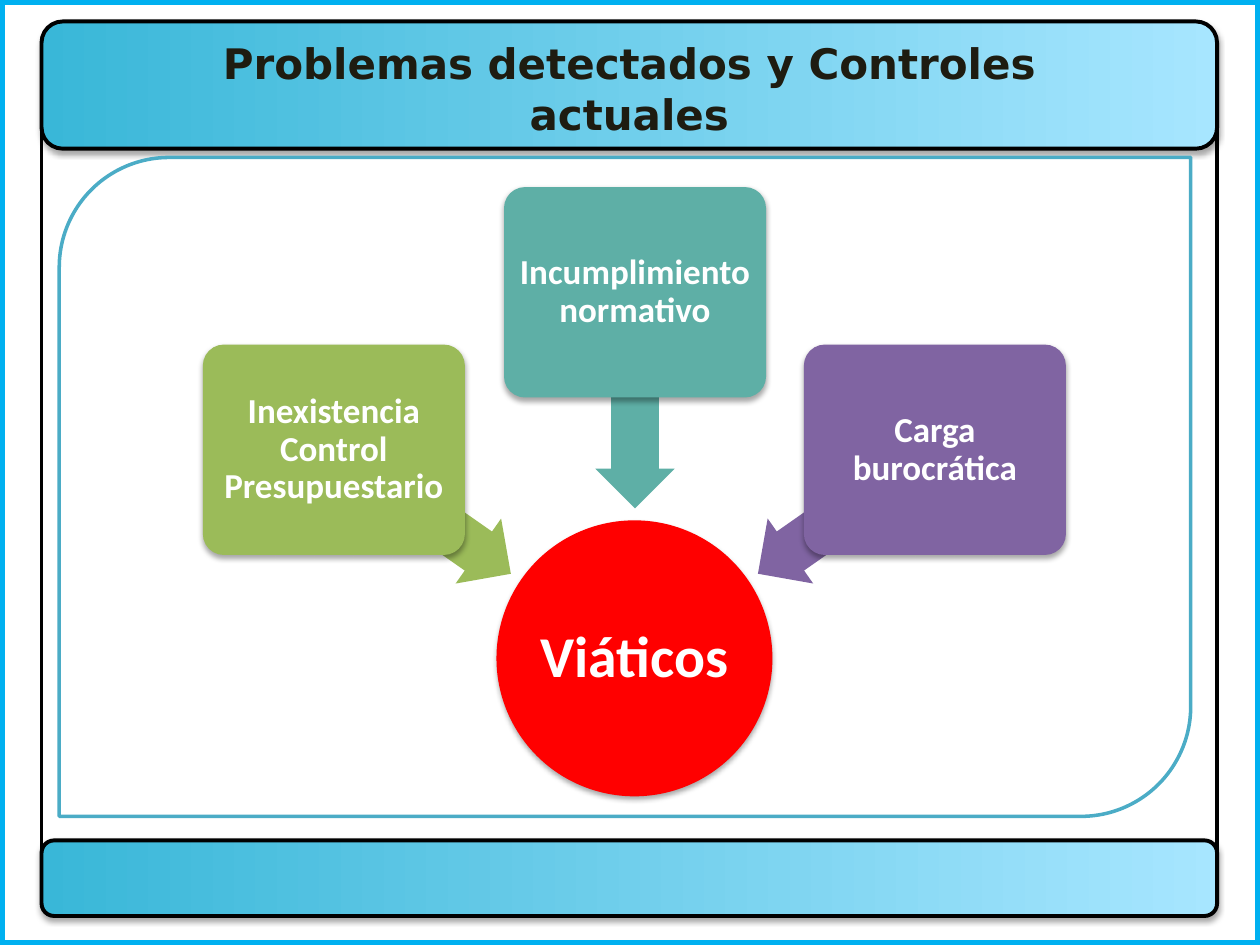
from math import cos, radians, sin

from lxml import etree
from pptx import Presentation
from pptx.dml.color import RGBColor
from pptx.enum import shapes, text
from pptx.oxml import ns
from pptx.util import Inches, Pt

WHITE = RGBColor(0xFF, 0xFF, 0xFF)
BLACK = RGBColor(0, 0, 0)
INK = RGBColor(0x1E, 0x1C, 0x11)
FRAME_BLUE = RGBColor(0x00, 0xB0, 0xF0)
PANEL_BLUE = RGBColor(0x4B, 0xAC, 0xC6)
BANNER_DARK = RGBColor(0x39, 0xB7, 0xD8)
BANNER_LIGHT = RGBColor(0xA7, 0xE6, 0xFF)
RED = RGBColor(0xFF, 0, 0)
GREEN = RGBColor(0x9B, 0xBB, 0x59)
TEAL = RGBColor(0x5E, 0xAF, 0xA6)
PURPLE = RGBColor(0x80, 0x64, 0xA2)

SHAPE = shapes.MSO_SHAPE
BOX_WIDTH, BOX_HEIGHT = 2.08, 1.67
ARROW_LENGTH, ARROW_HEIGHT, ARROW_OFFSET = 1.71, 0.63, 0.86
PROBLEMS = [
    ("Inexistencia Control Presupuestario", GREEN, 2.65, 3.57, 35),
    ("Incumplimiento normativo", TEAL, 5.04, 2.32, 90),
    ("Carga burocrática", PURPLE, 7.42, 3.57, 145),
]


class SlidePainter:
    body_font = "Calibri"
    title_font = "DejaVu Sans"

    def __init__(self, slide):
        self.slide = slide

    def shape(self, kind, left, top, width, height, fill, line=None, weight=0):
        box = self.slide.shapes.add_shape(
            kind, Inches(left), Inches(top), Inches(width), Inches(height))
        box.shadow.inherit = False
        box.fill.solid()
        box.fill.fore_color.rgb = fill
        if line is None:
            box.line.fill.background()
        else:
            box.line.color.rgb = line
            box.line.width = Pt(weight)
        return box

    def cast_shadow(self, box):
        effects = box._element.spPr.find(ns.qn("a:effectLst"))
        shadow = etree.SubElement(
            effects, ns.qn("a:outerShdw"), blurRad=str(Pt(3.1)), dist=str(Pt(1.8)),
            dir="5400000", rotWithShape="0")
        color = etree.SubElement(shadow, ns.qn("a:srgbClr"), val=str(BLACK))
        etree.SubElement(color, ns.qn("a:alpha"), val="35000")

    def banner(self, top, height):
        box = self.shape(SHAPE.FLOWCHART_ALTERNATE_PROCESS, 0.33, top, 9.33, height,
                         BANNER_DARK, BLACK, 2.25)
        box.fill.gradient()
        box.fill.gradient_angle = 0
        stops = zip(box.fill.gradient_stops, (BANNER_DARK, BANNER_LIGHT))
        for position, (stop, color) in enumerate(stops):
            stop.position = position
            stop.color.rgb = color
        self.cast_shadow(box)

    def set_words(self, box, words, size, font, color):
        frame = box.text_frame
        frame.text = words
        frame.word_wrap = True
        para = frame.paragraphs[0]
        para.alignment = text.PP_ALIGN.CENTER
        span = para.runs[0].font
        span.name, span.size, span.bold = font, Pt(size), True
        span.color.rgb = color
        return frame

    def title(self, words):
        box = self.slide.shapes.add_textbox(
            Inches(1.08), Inches(0.25), Inches(7.83), Inches(0.93))
        self.set_words(box, words, 24, self.title_font, INK)

    def label(self, box, words, size, inset):
        frame = self.set_words(box, words, size, self.body_font, WHITE)
        frame.vertical_anchor = text.MSO_ANCHOR.MIDDLE
        frame.margin_left = frame.margin_right = Inches(inset)
        frame.margin_top = frame.margin_bottom = Inches(inset)
        frame.paragraphs[0].line_spacing = 0.9

    def problem(self, words, color, center_x, center_y, angle):
        arrow_x = center_x + ARROW_OFFSET * cos(radians(angle))
        arrow_y = center_y + ARROW_OFFSET * sin(radians(angle))
        arrow = self.shape(SHAPE.LEFT_ARROW, arrow_x - ARROW_LENGTH / 2,
                           arrow_y - ARROW_HEIGHT / 2, ARROW_LENGTH, ARROW_HEIGHT, color)
        arrow.adjustments[0] = 0.6
        arrow.rotation = angle + 180
        box = self.shape(SHAPE.ROUNDED_RECTANGLE, center_x - BOX_WIDTH / 2,
                         center_y - BOX_HEIGHT / 2, BOX_WIDTH, BOX_HEIGHT, color)
        box.adjustments[0] = 0.1
        self.cast_shadow(box)
        self.label(box, words, 20, 0.04)

    def hub(self, words):
        circle = self.shape(SHAPE.OVAL, 3.94, 4.13, 2.19, 2.19, RED)
        self.cast_shadow(circle)
        self.label(circle, words, 33, 0.02)


def main():
    deck = Presentation()
    deck.slide_width, deck.slide_height = Inches(10), Inches(7.5)
    painter = SlidePainter(deck.slides.add_slide(deck.slide_layouts[6]))
    painter.shape(SHAPE.RECTANGLE, 0, 0, 10, 7.5, WHITE, FRAME_BLUE, 6)
    painter.shape(SHAPE.FLOWCHART_PROCESS, 0.33, 0.5, 9.33, 6.33, WHITE, BLACK, 2.25)
    painter.banner(0.17, 1.01)
    painter.banner(6.67, 0.6)
    painter.shape(SHAPE.ROUND_2_DIAG_RECTANGLE, 0.47, 1.25, 8.98, 5.23,
                  WHITE, PANEL_BLUE, 2)
    painter.title("Problemas detectados y Controles actuales")
    painter.hub("Viáticos")
    for problem in PROBLEMS:
        painter.problem(*problem)
    deck.save("out.pptx")


if __name__ == "__main__":
    main()
